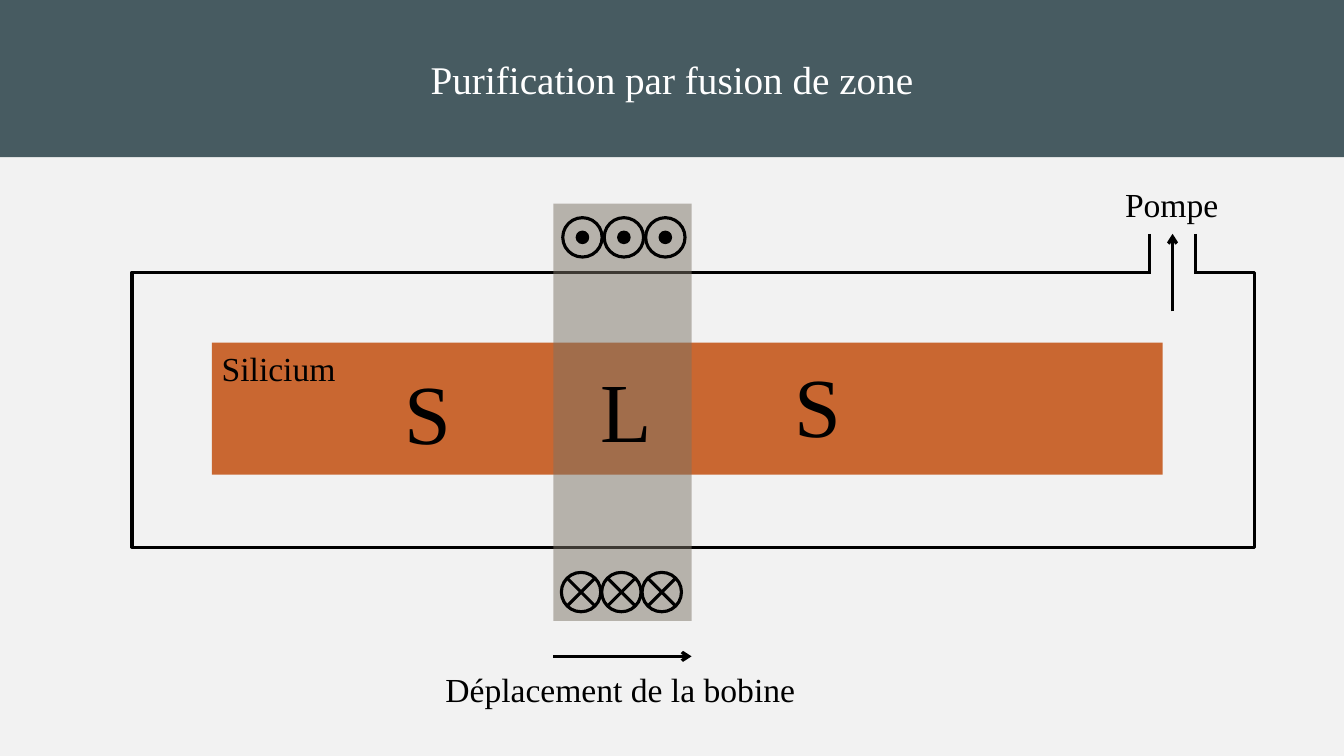
from dataclasses import dataclass
from math import sqrt

from lxml import etree
from pptx import Presentation, util as u
from pptx.dml.color import RGBColor
from pptx.enum import shapes, text
from pptx.oxml.ns import qn

FONT = "Times New Roman"
BLACK, WHITE, PAPER = "000000", "FFFFFF", "F2F2F2"
SLATE, COPPER, TAUPE = "475B61", "C96731", "7B7366"
RECTANGLE = shapes.MSO_SHAPE.RECTANGLE
OVAL = shapes.MSO_SHAPE.OVAL


@dataclass
class Box:
    left: float
    top: float
    width: float
    height: float

    def point(self, across, down):
        return (self.left + self.width * across / 100,
                self.top + self.height * down / 100)

    def portion(self, across, down, width, height):
        return Box(*self.point(across, down),
                   self.width * width / 100, self.height * height / 100)

    def lengths(self):
        return [u.Inches(n) for n in (self.left, self.top, self.width, self.height)]


def color(value):
    return RGBColor.from_string(value)


def add_figure(slide, kind, box, fill=None, line=None, weight=2.25, opacity=None):
    shape = slide.shapes.add_shape(kind, *box.lengths())
    shape.shadow.inherit = False
    if fill:
        shape.fill.solid()
        shape.fill.fore_color.rgb = color(fill)
        if opacity:
            tint = shape.element.spPr.find(qn("a:solidFill"))[0]
            etree.SubElement(tint, qn("a:alpha"), val=str(opacity * 1000))
    else:
        shape.fill.background()
    if line:
        shape.line.color.rgb = color(line)
        shape.line.width = u.Pt(weight)
    else:
        shape.line.fill.background()
    return shape


def add_line(slide, start, end, arrow=False):
    line = slide.shapes.add_connector(
        shapes.MSO_CONNECTOR.STRAIGHT, *[u.Inches(n) for n in (*start, *end)])
    line.line.color.rgb = color(BLACK)
    line.line.width = u.Pt(2.25)
    properties = line.element.spPr
    if arrow:
        etree.SubElement(properties.find(qn("a:ln")), qn("a:tailEnd"), type="arrow")
    etree.SubElement(properties, qn("a:effectLst"))


def write(shape, words, size, ink=BLACK):
    para = shape.text_frame.paragraphs[0]
    para.text = words
    para.font.name = FONT
    para.font.size = u.Pt(size)
    para.font.color.rgb = color(ink)
    return para


def add_label(slide, box, words, size=24, wrap=False):
    label = slide.shapes.add_textbox(*box.lengths())
    label.text_frame.word_wrap = wrap
    label.text_frame.auto_size = text.MSO_AUTO_SIZE.SHAPE_TO_FIT_TEXT
    write(label, words, size)


def add_banner(slide, box):
    banner = add_figure(slide, RECTANGLE, box, SLATE)
    banner.text_frame.vertical_anchor = text.MSO_ANCHOR.MIDDLE
    para = write(banner, "Purification par fusion de zone", 28, WHITE)
    para.alignment = text.PP_ALIGN.CENTER


def add_vessel(slide, box, bar):
    add_figure(slide, RECTANGLE, bar, COPPER)
    add_figure(slide, RECTANGLE, box, line=BLACK)
    add_label(slide, bar.portion(0, 0, 14.2, 38.17), "Silicium")


def add_pump(slide, box):
    add_figure(slide, RECTANGLE, box, PAPER)
    for side in (0, 100):
        add_line(slide, box.point(side, 4.3), box.point(side, 62))
    add_line(slide, box.point(50, 116), box.point(50, 4.3), arrow=True)
    add_label(slide, box.portion(-74, -74, 248, 72.5), "Pompe")


def add_turn(slide, center, size, outward):
    x, y = center

    def around(diameter):
        return Box(x - diameter / 2, y - diameter / 2, diameter, diameter)

    add_figure(slide, OVAL, around(size), line=BLACK)
    if outward:
        add_figure(slide, OVAL, around(size * 0.31), BLACK, BLACK, 1)
    else:
        cross = around(size / sqrt(2))
        add_line(slide, cross.point(0, 100), cross.point(100, 0))
        add_line(slide, cross.point(0, 0), cross.point(100, 100))


def add_coil(slide, box):
    add_figure(slide, RECTANGLE, box, TAUPE, opacity=50)
    for first, step, down, outward in ((20, 29.2, 93.1, False), (21, 30, 8.1, True)):
        for turn in range(3):
            center = box.point(first + step * turn, down)
            add_turn(slide, center, box.width * 0.285, outward)
    add_line(slide, box.point(0, 108.5), box.point(100, 108.5), arrow=True)
    add_label(slide, box.portion(-85.4, 110.4, 270, 12.1), "Déplacement de la bobine")


def add_phases(slide, bar):
    for letter, across, down in (("S", 19.2, 9.9), ("S", 60.2, 4.6), ("L", 39.8, 8.4)):
        add_label(slide, bar.portion(across, down, 7, 84.7), letter, 60, wrap=True)


def main():
    deck = Presentation()
    deck.slide_width, deck.slide_height = u.Inches(13.33), u.Inches(7.5)
    slide = deck.slides.add_slide(deck.slide_layouts[6])
    slide.background.fill.solid()
    slide.background.fill.fore_color.rgb = color(PAPER)

    page = Box(0, 0, 13.33, 7.5)
    vessel = page.portion(9.83, 36, 83.5, 36.4)
    bar = vessel.portion(7.1, 25.6, 84.73, 48)
    add_banner(slide, page.portion(0, 0, 100, 20.8))
    add_vessel(slide, vessel, bar)
    add_pump(slide, page.portion(85.52, 30.53, 3.45, 9.2))
    add_coil(slide, page.portion(41.18, 26.93, 10.28, 55.2))
    add_phases(slide, bar)
    deck.save("out.pptx")


if __name__ == "__main__":
    main()
